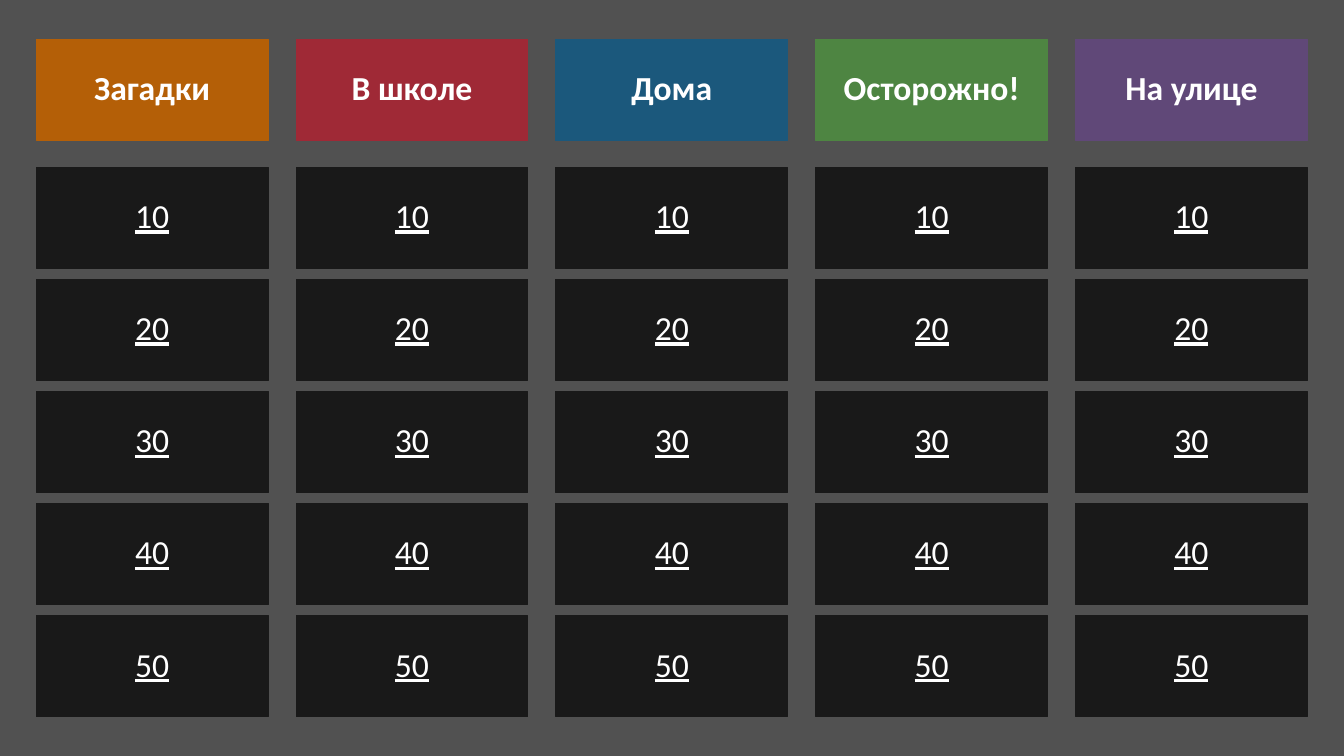
from pptx import Presentation
from pptx.dml.color import RGBColor
from pptx.enum import shapes, text
from pptx.util import Pt

COLOURS = {
    "background": "515151",
    "price": "191919",
    "lettering": "FFFFFF",
    "riddles": "B45F07",
    "school": "9F2936",
    "home": "1B587C",
    "caution": "4E8542",
    "street": "604878",
}
TOPICS = [
    ("Загадки", "riddles"),
    ("В школе", "school"),
    ("Дома", "home"),
    ("Осторожно!", "caution"),
    ("На улице", "street"),
]
PRICES = ["10", "20", "30", "40", "50"]

TILE_WIDTH, TILE_HEIGHT = 165.6, 72
BOARD_LEFT, COLUMN_STEP = 25.9, 185.6
TOPIC_TOP = 28.1
PRICE_TOP, PRICE_STEP = 119.5, 80.1


def colour(name):
    return RGBColor.from_string(COLOURS[name])


def add_tile(slide, left, top, label, fill, bold=False, underline=False):
    tile = slide.shapes.add_shape(
        shapes.MSO_SHAPE.RECTANGLE,
        Pt(left), Pt(top), Pt(TILE_WIDTH), Pt(TILE_HEIGHT))
    tile.shadow.inherit = False
    tile.fill.solid()
    tile.fill.fore_color.rgb = colour(fill)
    tile.line.color.rgb = colour(fill)
    tile.line.width = Pt(0.75)

    frame = tile.text_frame
    frame.word_wrap = True
    frame.vertical_anchor = text.MSO_ANCHOR.MIDDLE
    caption = frame.paragraphs[0]
    caption.alignment = text.PP_ALIGN.CENTER
    caption.line_spacing = 0.9
    caption.space_before = Pt(10)
    run = caption.add_run()
    run.text = label
    run.font.name = "Calibri"
    run.font.size = Pt(24)
    run.font.bold = bold
    run.font.underline = underline
    run.font.color.rgb = colour("lettering")


def add_column(slide, left, topic, fill):
    """Add a topic tile with its price tiles below."""
    add_tile(slide, left, TOPIC_TOP, topic, fill, bold=True)
    for row, price in enumerate(PRICES):
        add_tile(slide, left, PRICE_TOP + row * PRICE_STEP, price, "price",
                 underline=True)


def main():
    deck = Presentation()
    deck.slide_width, deck.slide_height = Pt(960), Pt(540)
    slide = deck.slides.add_slide(deck.slide_layouts[6])
    slide.background.fill.solid()
    slide.background.fill.fore_color.rgb = colour("background")
    for column, (topic, fill) in enumerate(TOPICS):
        add_column(slide, BOARD_LEFT + column * COLUMN_STEP, topic, fill)
    deck.save("out.pptx")


if __name__ == "__main__":
    main()
